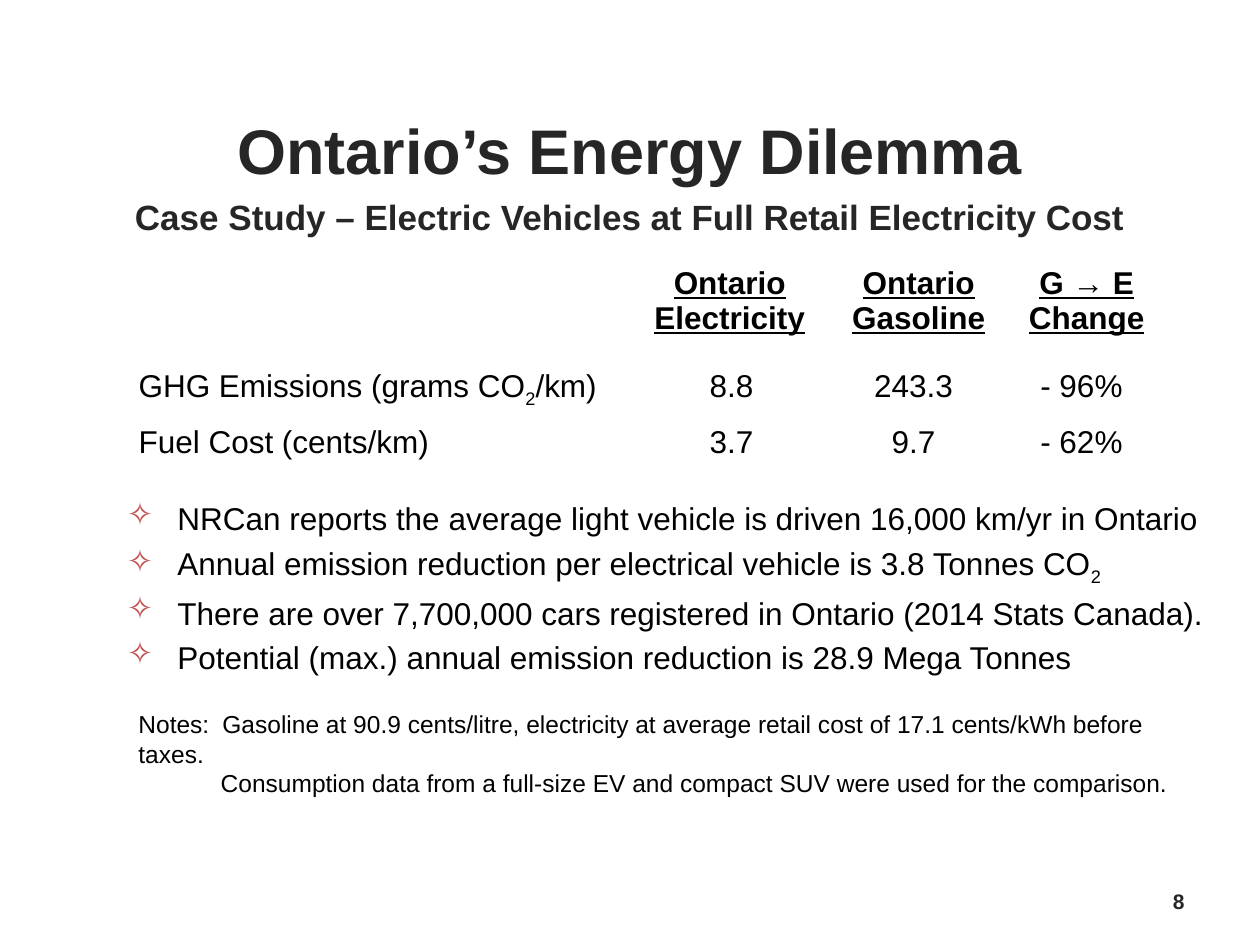
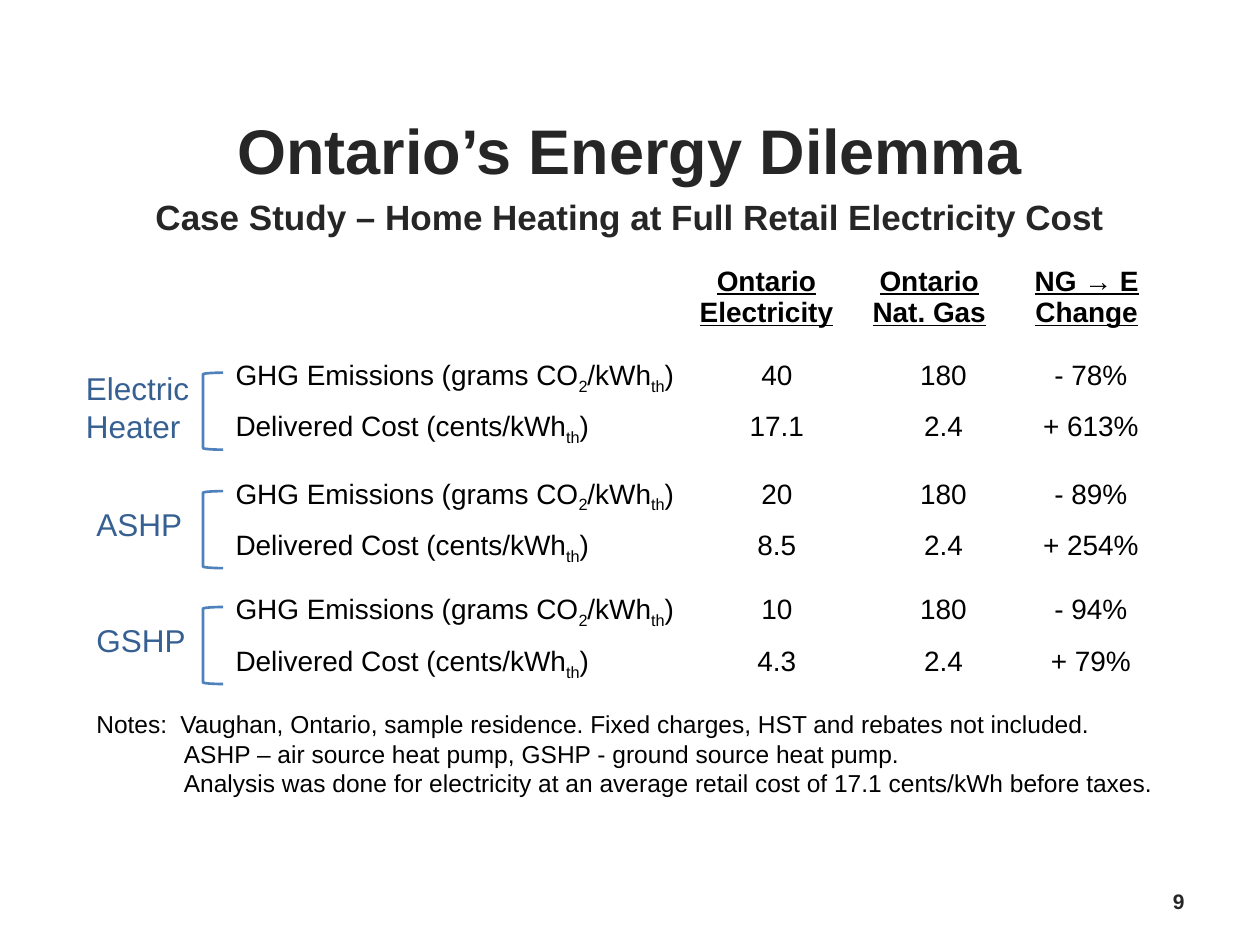
from lxml import etree
from pptx import Presentation
from pptx.dml.color import RGBColor
from pptx.enum.shapes import MSO_SHAPE
from pptx.enum.text import MSO_ANCHOR, PP_ALIGN
from pptx.oxml.ns import qn
from pptx.util import Pt

LEFT, CENTER, RIGHT = PP_ALIGN.LEFT, PP_ALIGN.CENTER, PP_ALIGN.RIGHT
TOP, MIDDLE = MSO_ANCHOR.TOP, MSO_ANCHOR.MIDDLE
BRACKET = MSO_SHAPE.LEFT_BRACKET

BLACK = "000000"
HEADING = "262626"
LABEL = "376092"
BRACKET_LINE = "4F81BD"
BULLET = "C0504D"

TITLE = {"size": Pt(36), "bold": True}
SUBTITLE = {"size": Pt(20), "bold": True}
NUMBER = {"size": Pt(12), "bold": True}
BODY = {"size": Pt(18)}
NOTE = {"size": Pt(14)}
NOTE_TAB = 48
ROW_HEIGHT = 29.3

EMISSIONS = "GHG Emissions (grams CO~2~/kWh~th~)"
COST = "Delivered Cost (cents/kWh~th~)"
HEATERS = [
    (["Electric", "Heater"], 42, 202.3, ["40", "180", "- 78%"], ["17.1", "2.4", "+ 613%"]),
    (["ASHP"], 48, 270, ["20", "180", "- 89%"], ["8.5", "2.4", "+ 254%"]),
    (["GSHP"], 48, 336.2, ["10", "180", "- 94%"], ["4.3", "2.4", "+ 79%"]),
]

PAGES = [
    {
        "number": "8",
        "subtitle": "Case Study – Electric Vehicles at Full Retail Electricity Cost",
        "size": 18,
        "header_columns": [318, 114, 102, 90],
        "headers": ["", "Ontario\nElectricity", "Ontario\nGasoline", "G → E\nChange"],
        "data_left": 72,
        "data_columns": [290, 112, 96, 96],
        "data": [(207.4, [
            ["GHG Emissions (grams CO~2~/km)", "8.8", "243.3", "- 96%"],
            ["Fuel Cost (cents/km)", "3.7", "9.7", "- 62%"],
        ])],
        "notes_box": (72, 401.8, 630, 58),
        "notes_indent": 47,
        "notes": [
            "Notes:\tGasoline at 90.9 cents/litre, electricity at average retail cost "
            "of 17.1 cents/kWh before taxes.",
            "Consumption data from a full-size EV and compact SUV were used for the comparison.",
        ],
    },
    {
        "number": "9",
        "subtitle": "Case Study – Home Heating at Full Retail Electricity Cost",
        "size": 16,
        "header_columns": [348, 96, 90, 90],
        "headers": ["", "Ontario\nElectricity", "Ontario\nNat. Gas", "NG → E\nChange"],
        "data_left": 127.4,
        "data_columns": [268.5, 96, 94.5, 74],
        "data": [(top, [[EMISSIONS] + emissions, [COST] + cost])
                 for _, _, top, emissions, cost in HEATERS],
        "notes_box": (48, 401.8, 654, 92),
        "notes_indent": 50,
        "notes": [
            "Notes:\tVaughan, Ontario, sample residence. Fixed charges, HST and rebates not included.",
            "ASHP – air source heat pump, GSHP - ground source heat pump.",
            "Analysis was done for electricity at an average retail cost of 17.1 cents/kWh before taxes.",
        ],
    },
]

BULLETS = [
    "NRCan reports the average light vehicle is driven 16,000 km/yr in Ontario",
    "Annual emission reduction per electrical vehicle is 3.8 Tonnes CO~2~",
    "There are over 7,700,000 cars registered in Ontario (2014 Stats Canada).",
    "Potential (max.) annual emission reduction is 28.9 Mega Tonnes",
]


def write(frame, lines, style, color=BLACK, align=LEFT):
    for index, line in enumerate(lines):
        para = frame.paragraphs[0] if index == 0 else frame.add_paragraph()
        para.alignment = align
        for part, text in enumerate(line.split("~")):
            if not text:
                continue
            span = para.add_run()
            span.text = text
            span.font.name = "Arial"
            span.font.color.rgb = RGBColor.from_string(color)
            for name, value in style.items():
                setattr(span.font, name, value)
            if part % 2:
                span.font._element.set("baseline", "-25000")


def add_box(page, bounds, lines, style, color=BLACK, align=LEFT, anchor=TOP, wrap=True):
    box = page.shapes.add_textbox(*map(Pt, bounds))
    box.text_frame.word_wrap = wrap
    box.text_frame.vertical_anchor = anchor
    write(box.text_frame, lines, style, color, align)
    return box.text_frame.paragraphs


deck = Presentation()
deck.slide_width, deck.slide_height = Pt(720), Pt(540)
pages = []

for content in PAGES:
    page = deck.slides.add_slide(deck.slide_layouts[6])
    pages.append(page)
    add_box(page, (648, 500.4, 36, 28.8), [content["number"]], NUMBER, HEADING, RIGHT, MIDDLE)
    add_box(page, (30, 60, 660, 60), ["Ontario’s Energy Dilemma"], TITLE, HEADING, CENTER)
    add_box(page, (30, 108, 660, 36), [content["subtitle"]], SUBTITLE, HEADING, CENTER)

    data_style = {"size": Pt(content["size"])}
    header_style = {**data_style, "bold": True, "underline": True}
    tables = [(42, 148.3, content["header_columns"], 39.6, [content["headers"]], header_style)]
    for top, rows in content["data"]:
        tables.append((content["data_left"], top, content["data_columns"],
                       ROW_HEIGHT, rows, data_style))
    for left, top, columns, height, rows, style in tables:
        table = page.shapes.add_table(
            len(rows), len(columns), Pt(left), Pt(top),
            Pt(sum(columns)), Pt(height * len(rows))).table
        table.first_row = table.horz_banding = False
        for column, width in zip(table.columns, columns):
            column.width = Pt(width)
        for row_index, row in enumerate(rows):
            for column_index, text in enumerate(row):
                cell = table.cell(row_index, column_index)
                cell.fill.background()
                write(cell.text_frame, text.split("\n"), style,
                      align=CENTER if column_index else LEFT)

    notes = add_box(page, content["notes_box"], content["notes"], NOTE)
    tabs = etree.SubElement(notes[0]._p.get_or_add_pPr(), qn("a:tabLst"))
    etree.SubElement(tabs, qn("a:tab"), pos=str(Pt(NOTE_TAB)), algn="l")
    for para in notes[1:]:
        para._p.get_or_add_pPr().set("marL", str(Pt(content["notes_indent"])))

vehicles, heating = pages

for para in add_box(vehicles, (65.5, 281.5, 630.7, 108.7), BULLETS, BODY):
    properties = para._p.get_or_add_pPr()
    properties.set("marL", str(Pt(28.8)))
    properties.set("indent", str(-Pt(28.8)))
    bullet_color = etree.SubElement(properties, qn("a:buClr"))
    etree.SubElement(bullet_color, qn("a:srgbClr"), val=BULLET)
    etree.SubElement(properties, qn("a:buChar"), char="✧")
    para.space_after = Pt(4)

for label, left, top, _, _ in HEATERS:
    bracket = heating.shapes.add_shape(BRACKET, Pt(116), Pt(top + 10.7), Pt(11.5), Pt(44))
    bracket.shadow.inherit = False
    bracket.fill.background()
    bracket.line.color.rgb = RGBColor.from_string(BRACKET_LINE)
    bracket.line.width = Pt(1.5)
    label_top = top + 25 - 10 * len(label)
    add_box(heating, (left, label_top, 116 - left, 7.2 + 21.8 * len(label)),
            label, BODY, LABEL, wrap=False)

deck.save("out.pptx")
